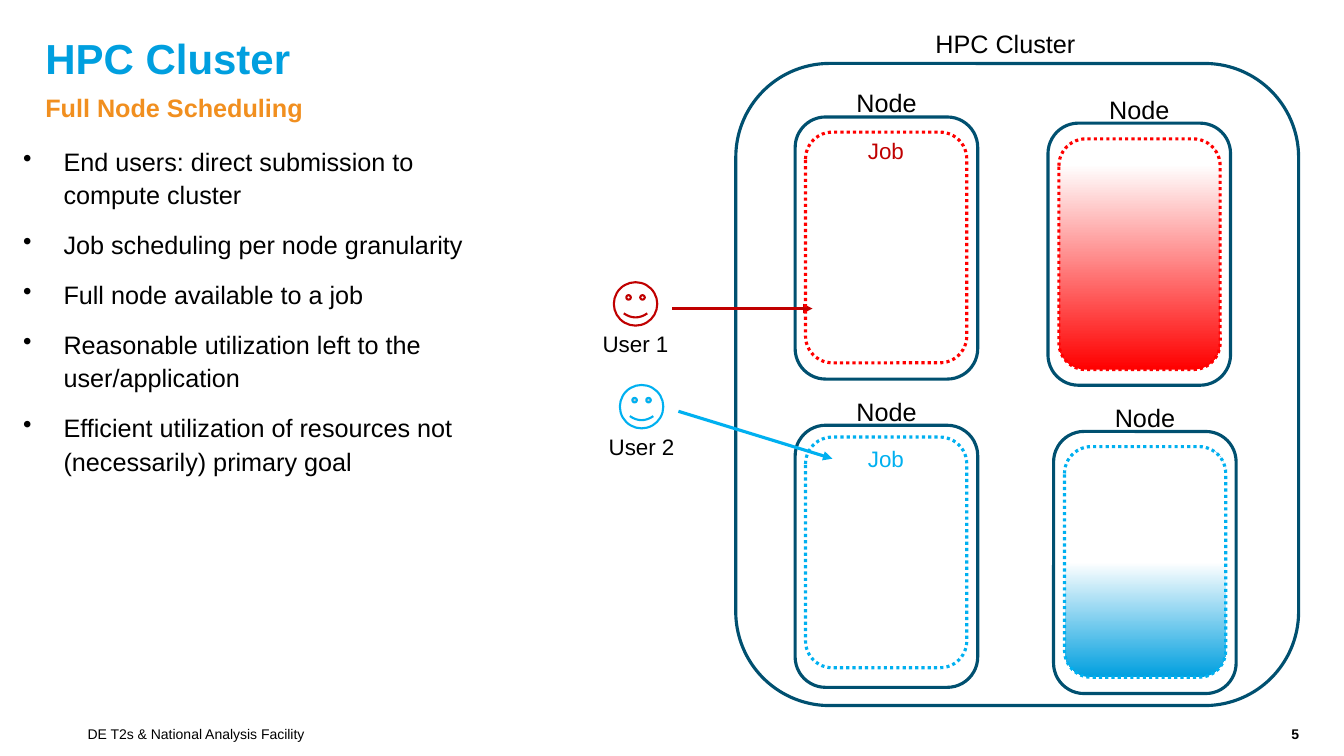
"""Build the slide on full node scheduling in an HPC cluster."""
import pptx
import pptx.dml.color
import pptx.enum.dml
import pptx.enum.shapes
import pptx.enum.text
import pptx.oxml
import pptx.oxml.ns
import pptx.util

Pt = pptx.util.Pt
SHAPE = pptx.enum.shapes.MSO_SHAPE
ALIGN = pptx.enum.text.PP_ALIGN

THEME = {
    "font": "Arial", "black": "000000", "white": "FFFFFF",
    "title": "009FDF", "subtitle": "F18F1F", "frame": "005070",
    "title_size": 30, "body_size": 18, "small_size": 16, "footer_size": 10,
    "line": 2.25, "face_line": 1.5,
}

TITLE = "HPC Cluster"
SUBTITLE = "Full Node Scheduling"
BULLETS = [
    "End users: direct submission to compute cluster",
    "Job scheduling per node granularity",
    "Full node available to a job",
    "Reasonable utilization left to the user/application",
    "Efficient utilization of resources not (necessarily) primary goal",
]
FOOTER = "DE T2s & National Analysis Facility"
PAGE_NUMBER = "5"

CLUSTER = (525.6, 45.36, 402, 458.64)
NODE_SIZE = (130.4, 187.2)
JOB_SIZE = (115.2, 164.8)
NODES = [
    {"at": (568, 83.6), "job": (7.4, 10.8), "line": "FF0000", "label": "C00000"},
    {"at": (748.6, 88), "job": (7.8, 11.2), "line": "FF0000", "fade": ("FF0000", 0.89)},
    {"at": (568, 303.8), "job": (7.4, 8.4), "line": "00B0F0", "label": "00B0F0"},
    {"at": (752.6, 308.2), "job": (7.8, 10.8), "line": "00B0F0", "fade": ("009FDF", 0.5)},
]
FACE_SIZE = 31
USERS = [
    {"name": "User 1", "at": (438.5, 201.6), "color": "C00000", "fill": None,
     "target": (580.4, 220.4)},
    {"name": "User 2", "at": (442.8, 275), "color": "00B0F0", "fill": "FFFFFF",
     "target": (594.6, 327.6)},
]


def rgb(color):
    """Return a colour object for a hex string."""
    return pptx.dml.color.RGBColor.from_string(color)


def add_text(page, lines, area, size, color="black", bold=False, align=ALIGN.LEFT,
             inset=0, spacing=None, bullet=False):
    """Add a text box with one paragraph for each line."""
    box = page.shapes.add_textbox(*map(Pt, area))
    frame = box.text_frame
    frame.word_wrap = True
    frame.margin_left = frame.margin_right = Pt(inset)
    frame.margin_top = frame.margin_bottom = Pt(inset)
    for index, line in enumerate(lines):
        para = frame.paragraphs[0] if index == 0 else frame.add_paragraph()
        para.text = line
        para.alignment = align
        if spacing:
            para.line_spacing = spacing
        if bullet:
            para.space_before = Pt(12 if index else 0)
            props = para._p.get_or_add_pPr()
            props.set("marL", str(Pt(28.8)))
            props.set("indent", str(-Pt(28.8)))
            mark = pptx.oxml.parse_xml(
                f'<a:buChar {pptx.oxml.ns.nsdecls("a")} char="•"/>')
            props.append(mark)
        for span in para.runs:
            span.font.name = THEME["font"]
            span.font.size = Pt(THEME[size])
            span.font.bold = bold
            span.font.color.rgb = rgb(THEME.get(color, color))


def add_label(page, text, area, size, color="black"):
    """Add a centred diagram label."""
    add_text(page, [text], area, size, color, align=ALIGN.CENTER, inset=3.6)


def add_outline(page, kind, area, color, width, fill=None, dotted=False):
    """Add an outlined preset shape."""
    shape = page.shapes.add_shape(kind, *map(Pt, area))
    shape.shadow.inherit = False
    shape.line.color.rgb = rgb(color)
    shape.line.width = Pt(width)
    if dotted:
        shape.line.dash_style = pptx.enum.dml.MSO_LINE.ROUND_DOT
    if fill:
        shape.fill.solid()
        shape.fill.fore_color.rgb = rgb(fill)
    else:
        shape.fill.background()
    return shape


def add_node(page, node):
    """Add a node frame with its label above."""
    left, top = node["at"]
    add_outline(page, SHAPE.ROUNDED_RECTANGLE, (left, top, *NODE_SIZE),
                THEME["frame"], THEME["line"])
    add_label(page, "Node", (left + 16.6, top - 24.4, 97.2, 27.2), "body_size")


def add_job(page, node):
    """Add the dotted job frame of a node, labelled or faded to show its load."""
    left, top = node["at"]
    inset_x, inset_y = node["job"]
    job = add_outline(page, SHAPE.ROUNDED_RECTANGLE,
                      (left + inset_x, top + inset_y, *JOB_SIZE),
                      node["line"], THEME["line"], dotted=True)
    if "fade" in node:
        color, reach = node["fade"]
        job.fill.gradient()
        job.fill.gradient_angle = 90
        stops = zip(job.fill.gradient_stops, ((color, 0), (THEME["white"], reach)))
        for stop, (tint, position) in stops:
            stop.color.rgb = rgb(tint)
            stop.position = position
    else:
        add_label(page, "Job", (left + 16.2, top + 10.8, 97.2, 24.6),
                  "small_size", node["label"])


def add_user(page, user):
    """Add a user face, its name and the arrow to a job."""
    left, top = user["at"]
    add_outline(page, SHAPE.SMILEY_FACE, (left, top, FACE_SIZE, FACE_SIZE),
                user["color"], THEME["face_line"], user["fill"])
    add_label(page, user["name"], (left - 24.5, top + FACE_SIZE, 80, 24.6), "small_size")
    arrow = page.shapes.add_connector(
        pptx.enum.shapes.MSO_CONNECTOR.STRAIGHT,
        Pt(left + 41.8), Pt(top + 18.8), *map(Pt, user["target"]))
    arrow.line.color.rgb = rgb(user["color"])
    arrow.line.width = Pt(THEME["line"])
    names = pptx.oxml.ns.nsdecls("a")
    arrow.line._get_or_add_ln().append(
        pptx.oxml.parse_xml(f'<a:tailEnd {names} type="triangle"/>'))
    arrow._element.spPr.append(pptx.oxml.parse_xml(f"<a:effectLst {names}/>"))


def main():
    """Assemble and save the deck."""
    deck = pptx.Presentation()
    deck.slide_width, deck.slide_height = Pt(960), Pt(540)
    page = deck.slides.add_slide(deck.slide_layouts[6])

    add_text(page, [FOOTER], (62.6, 518.4, 783.4, 10.8), "footer_size")
    add_text(page, [PAGE_NUMBER], (900, 518.4, 28, 10.8), "footer_size",
             bold=True, align=ALIGN.RIGHT)
    add_text(page, [TITLE], (32.4, 27.4, 895.6, 35.2), "title_size", "title",
             bold=True, spacing=0.9)
    add_text(page, BULLETS, (16.6, 102.2, 352.8, 394.6), "body_size",
             spacing=1.1, bullet=True)
    add_text(page, [SUBTITLE], (32.4, 64, 895.6, 29.6), "body_size", "subtitle",
             bold=True, spacing=1.1)

    add_outline(page, SHAPE.ROUNDED_RECTANGLE, CLUSTER, THEME["frame"],
                THEME["line"], THEME["white"])
    add_label(page, "HPC Cluster", (584.6, 16.6, 267.2, 27.2), "body_size")
    for node in NODES:
        add_node(page, node)
    for user in USERS:
        add_user(page, user)
    for node in NODES:
        add_job(page, node)
    deck.save("out.pptx")


if __name__ == "__main__":
    main()
